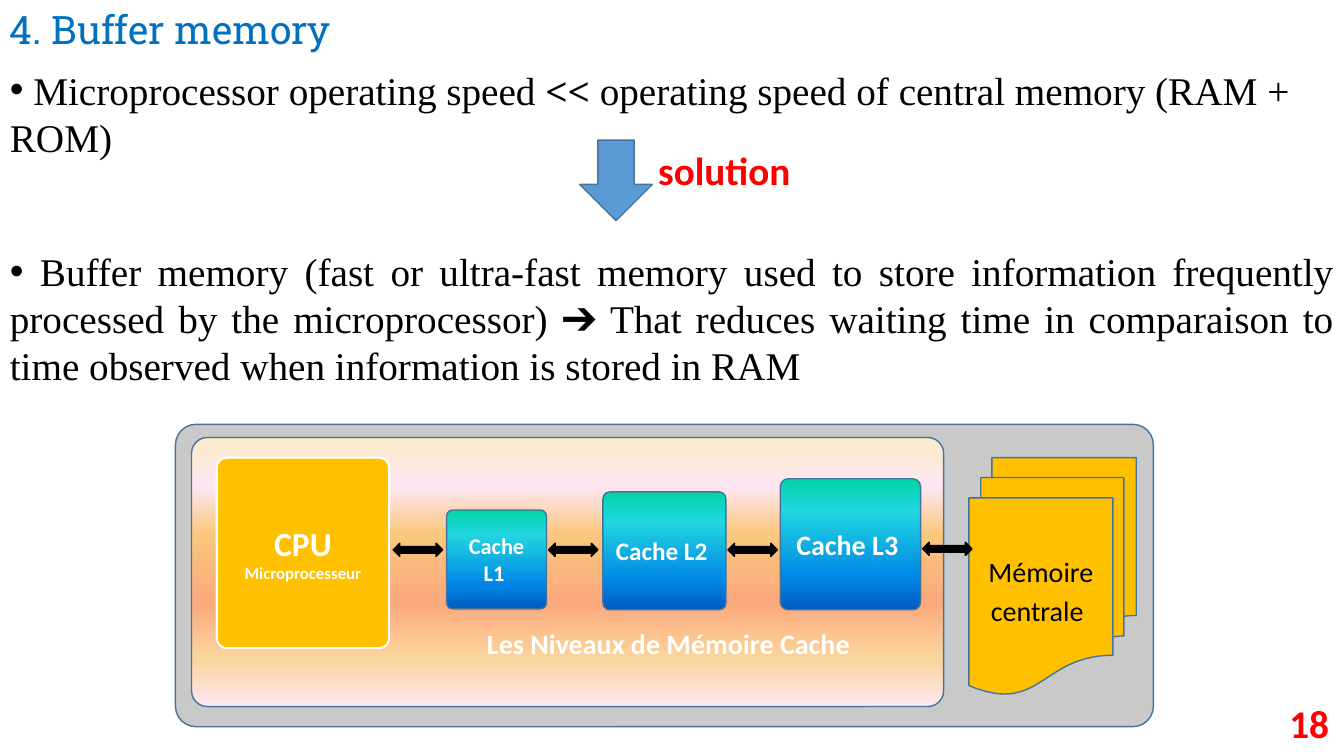
"""Builds the buffer memory slide with its cache level diagram."""
from lxml import etree
from pptx import Presentation
from pptx.dml.color import RGBColor
from pptx.enum.shapes import MSO_SHAPE as SHAPE
from pptx.enum.text import MSO_ANCHOR as ANCHOR, PP_ALIGN as ALIGN
from pptx.oxml import parse_xml
from pptx.oxml.ns import nsdecls, qn
from pptx.util import Inches, Pt

COLORS = {
    "title": "0070C0", "red": "FF0000", "black": "000000", "white": "FFFFFF",
    "blue": "5B9BD5", "outline": "43739E", "gray": "C9C9C9", "amber": "FFC000",
}
SUNSET = [(0, "FBEAC7"), (18, "FEE7F2"), (36, "FAC77D"),
          (61, "FBA97D"), (82, "FBD49C"), (100, "FEE7F2")]
OCEAN = [(0, "03D4A8"), (25, "21D6E0"), (75, "0087E6"), (100, "005CBF")]


def rgb(name):
    """Return the named colour."""
    return RGBColor.from_string(COLORS[name])


def add_run(p, text, size=28, font="Calibri", color="black", bold=False):
    """Append a formatted run to a paragraph."""
    r = p.add_run()
    r.text = text
    r.font.size, r.font.name, r.font.bold = Pt(size), font, bold
    r.font.color.rgb = rgb(color)


def add_text(slide, box, text, align=ALIGN.LEFT, anchor=ANCHOR.TOP, wrap=True, **style):
    """Add a text box and return its paragraph."""
    tf = slide.shapes.add_textbox(*map(Inches, box)).text_frame
    tf.word_wrap, tf.vertical_anchor = wrap, anchor
    p = tf.paragraphs[0]
    p.alignment = align
    add_run(p, text, **style)
    return p


def set_bullet(p):
    """Give a paragraph a round bullet without a hanging indent."""
    pPr = p._p.get_or_add_pPr()
    pPr.set("marL", "0")
    pPr.set("indent", "0")
    etree.SubElement(pPr, qn("a:buFont")).set("typeface", "Arial")
    etree.SubElement(pPr, qn("a:buChar")).set("char", "•")


def set_gradient(sp, stops):
    """Fill a shape with a gradient running from top to bottom."""
    marks = "".join(f'<a:gs pos="{pos * 1000}"><a:srgbClr val="{color}"/></a:gs>'
                    for pos, color in stops)
    sp.fill.background()
    old = sp._element.spPr.find(qn("a:noFill"))
    old.getparent().replace(old, parse_xml(
        f'<a:gradFill {nsdecls("a")} rotWithShape="1"><a:gsLst>{marks}</a:gsLst>'
        '<a:lin ang="5400000" scaled="0"/></a:gradFill>'))


def add_box(slide, kind, box, fill, line="outline", width=1, adj=None, runs=()):
    """Add a filled shape with centred runs of (text, style)."""
    sp = slide.shapes.add_shape(kind, *map(Inches, box))
    sp.shadow.inherit = False
    if isinstance(fill, list):
        set_gradient(sp, fill)
    else:
        sp.fill.solid()
        sp.fill.fore_color.rgb = rgb(fill)
    sp.line.color.rgb, sp.line.width = rgb(line), Pt(width)
    if adj is not None:
        sp.adjustments[0] = adj
    tf = sp.text_frame
    tf.word_wrap, tf.vertical_anchor = True, ANCHOR.MIDDLE
    p = tf.paragraphs[0]
    p.alignment = ALIGN.CENTER
    for text, style in runs:
        add_run(p, text, **style)
    return sp


def add_problem(slide, x, y, w, h):
    """Add the bullet that compares the operating speeds."""
    serif = {"font": "Times New Roman"}
    p = add_text(slide, (x, y, w, h), " Microprocessor operating speed ",
                 anchor=ANCHOR.MIDDLE, **serif)
    set_bullet(p)
    add_run(p, "<< ", bold=True, **serif)
    add_run(p, "operating speed of central memory (RAM + ROM)", **serif)


def add_solution(slide, x, y, w, h):
    """Add the down arrow, its label and the bullet below."""
    add_box(slide, SHAPE.DOWN_ARROW, (x + 5.75, y, 0.72, 0.8), "blue")
    add_text(slide, (x + 6.43, y + 0.01, 1.53, 0.57), "solution",
             wrap=False, color="red", bold=True)
    p = add_text(slide, (x, y + 1.01, w, h - 1.01),
                 " Buffer memory (fast or ultra-fast memory used to store information "
                 "frequently processed by the microprocessor) ➔ That reduces waiting time "
                 "in comparaison to time observed when information is stored in RAM",
                 align=ALIGN.JUSTIFY, anchor=ANCHOR.MIDDLE, font="Times New Roman")
    set_bullet(p)


def add_diagram(slide, x, y, w, h):
    """Add the CPU, the three cache levels and the central memory."""
    bold = {"color": "white", "bold": True}
    add_box(slide, SHAPE.ROUNDED_RECTANGLE, (x, y, w, h), "gray", adj=0.068)
    add_box(slide, SHAPE.ROUNDED_RECTANGLE, (x + 0.16, y + 0.13, 7.46, h - 0.33),
            SUNSET, adj=0.059)
    add_text(slide, (x + 2.61, y + 1.96, 4.56, 0.44), "Les Niveaux de Mémoire Cache",
             align=ALIGN.CENTER, size=20, **bold)
    add_box(slide, SHAPE.FLOWCHART_MULTIDOCUMENT, (x + 7.87, y + 0.33, 1.66, 2.35), "amber",
            runs=[("Mémoire centrale", {"size": 20}), (" ", {"size": 24})])
    caches = [(2.69, 0.85, 0.99, 0.98, 16),
              (4.24, 0.67, 1.22, 1.17, 18),
              (6.0, 0.54, 1.39, 1.3, 20)]
    for level, (dx, dy, cw, ch, size) in enumerate(caches, 1):
        add_box(slide, SHAPE.ROUNDED_RECTANGLE, (x + dx, y + dy, cw, ch), OCEAN, adj=0.059,
                runs=[(f"Cache L{level} ", {"size": size, **bold})])
    add_box(slide, SHAPE.ROUNDED_RECTANGLE, (x + 0.41, y + 0.33, 1.71, 1.89), "amber",
            line="white", width=1.5, adj=0.059,
            runs=[("CPU", {"size": 24, **bold}), (" ", {"size": 18, **bold}),
                  ("Microprocesseur", {"size": 12, **bold})])
    for dx, dy in [(2.16, 1.18), (3.7, 1.18), (5.48, 1.18), (7.41, 1.17)]:
        add_box(slide, SHAPE.LEFT_RIGHT_ARROW, (x + dx, y + dy, 0.49, 0.13),
                "black", line="black")


def main():
    """Build and save the presentation."""
    prs = Presentation()
    prs.slide_width, prs.slide_height = Inches(13.33), Inches(7.5)
    slide = prs.slides.add_slide(prs.slide_layouts[6])
    add_text(slide, (0, 0, 13.38, 0.57), "4. Buffer memory",
             font="Roboto Slab", color="title")
    add_text(slide, (10.28, 6.97, 3, 0.4), "18", align=ALIGN.RIGHT,
             anchor=ANCHOR.MIDDLE, color="red", bold=True)
    add_problem(slide, 0, 0.6, 13.33, 1.04)
    add_solution(slide, 0, 1.39, 13.33, 2.52)
    add_diagram(slide, 1.74, 4.21, 9.7, 3)
    prs.save("out.pptx")


if __name__ == "__main__":
    main()
